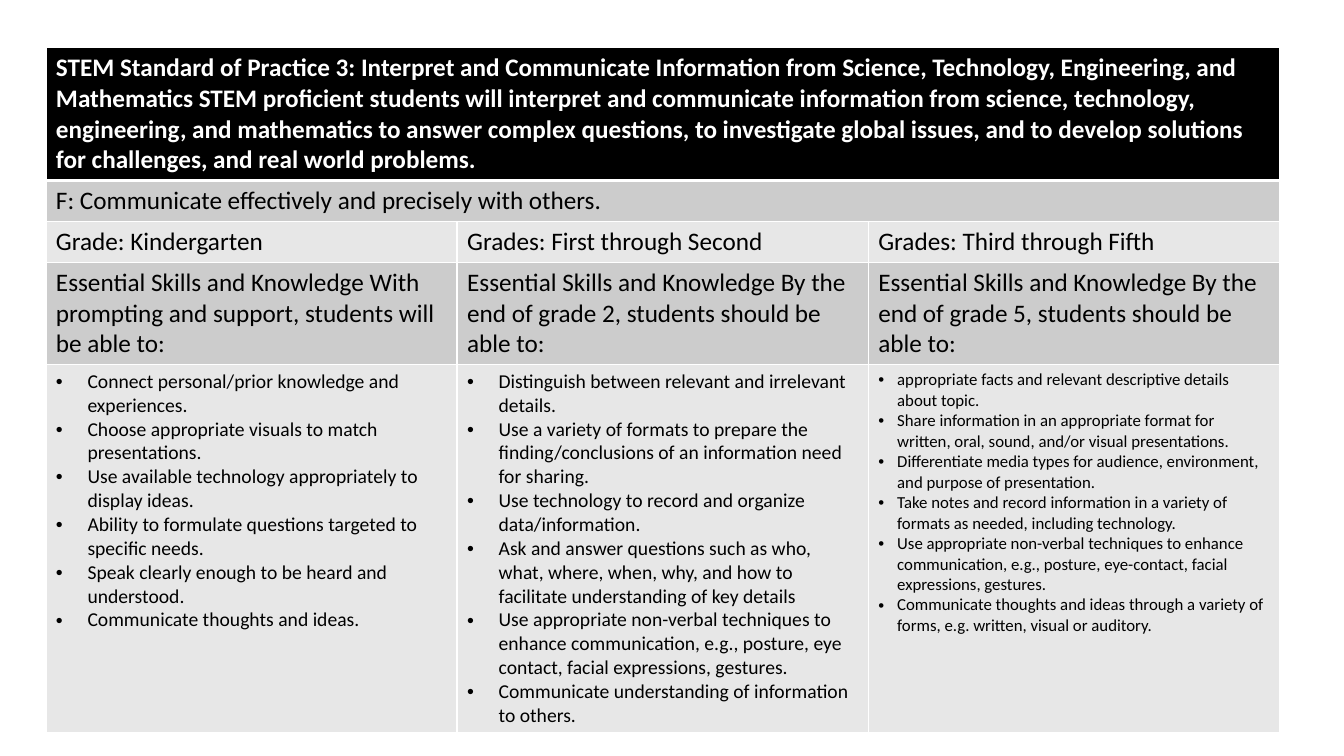
from dataclasses import dataclass

from lxml import etree
from pptx import Presentation
from pptx.dml.color import RGBColor
from pptx.oxml.ns import qn
from pptx.util import Pt

WHITE = RGBColor(0xFF, 0xFF, 0xFF)
BLACK = RGBColor(0, 0, 0)
MID_GREY = RGBColor(0xCC, 0xCC, 0xCC)
LIGHT_GREY = RGBColor(0xE7, 0xE7, 0xE7)
FONT = "Calibri"

LEFT, TOP = 32.8, 33.9
COLUMN_WIDTH = 293.7
ROW_HEIGHTS = [93.6, 29.2, 29.2, 72, 259.1]
ROW_FILLS = [BLACK, MID_GREY, LIGHT_GREY, MID_GREY, LIGHT_GREY]
THIN, THICK = 1, 3

STANDARD = (
    "STEM Standard of Practice 3: Interpret and Communicate Information from Science, "
    "Technology, Engineering, and Mathematics STEM proficient students will interpret and "
    "communicate information from science, technology, engineering, and mathematics to answer "
    "complex questions, to investigate global issues, and to develop solutions for challenges, "
    "and real world problems."
)
PRACTICE = "F: Communicate effectively and precisely with others."


@dataclass(frozen=True)
class GradeBand:
    grades: str
    lead_in: str
    skills: list[str]
    size: float
    indent: float


GRADE_BANDS = [
    GradeBand(
        "Grade: Kindergarten",
        "Essential Skills and Knowledge With prompting and support, students will be able to:",
        [
            "Connect personal/prior knowledge and experiences.",
            "Choose appropriate visuals to match presentations.",
            "Use available technology appropriately to display ideas.",
            "Ability to formulate questions targeted to specific needs.",
            "Speak clearly enough to be heard and understood.",
            "Communicate thoughts and ideas.",
        ],
        size=14, indent=22.5,
    ),
    GradeBand(
        "Grades: First through Second",
        "Essential Skills and Knowledge By the end of grade 2, students should be able to:",
        [
            "Distinguish between relevant and irrelevant details.",
            "Use a variety of formats to prepare the finding/conclusions of an information need "
            "for sharing.",
            "Use technology to record and organize data/information.",
            "Ask and answer questions such as who, what, where, when, why, and how to facilitate "
            "understanding of key details",
            "Use appropriate non-verbal techniques to enhance communication, e.g., posture, eye "
            "contact, facial expressions, gestures.",
            "Communicate understanding of information to others.",
        ],
        size=14, indent=22.5,
    ),
    GradeBand(
        "Grades: Third through Fifth",
        "Essential Skills and Knowledge By the end of grade 5, students should be able to:",
        [
            "appropriate facts and relevant descriptive details about topic.",
            "Share information in an appropriate format for written, oral, sound, and/or visual "
            "presentations.",
            "Differentiate media types for audience, environment, and purpose of presentation.",
            "Take notes and record information in a variety of formats as needed, including "
            "technology.",
            "Use appropriate non-verbal techniques to enhance communication, e.g., posture, "
            "eye-contact, facial expressions, gestures.",
            "Communicate thoughts and ideas through a variety of forms, e.g. written, visual or "
            "auditory.",
        ],
        size=12, indent=13.5,
    ),
]


def write(cell, *lines: str, size: float = 18, color: RGBColor = BLACK,
          bold: bool = False, bullet_indent: float = 0) -> None:
    """Fill a cell with one paragraph per line, bulleted if an indent is given."""
    frame = cell.text_frame
    for number, line in enumerate(lines):
        paragraph = frame.add_paragraph() if number else frame.paragraphs[0]
        run = paragraph.add_run()
        run.text = line
        run.font.name = FONT
        run.font.size = Pt(size)
        run.font.bold = bold
        run.font.color.rgb = color
        if bullet_indent:
            properties = paragraph._p.get_or_add_pPr()
            properties.set("marL", str(Pt(bullet_indent)))
            properties.set("indent", str(-Pt(bullet_indent)))
            etree.SubElement(properties, qn("a:buFont"), typeface="Arial")
            etree.SubElement(properties, qn("a:buChar"), char="•")


def set_borders(cell, top: float = THIN, bottom: float = THIN) -> None:
    """Draw white borders, which must precede the fill in the cell properties."""
    properties = cell._tc.get_or_add_tcPr()
    widths = {"a:lnL": THIN, "a:lnR": THIN, "a:lnT": top, "a:lnB": bottom}
    for position, (side, width) in enumerate(widths.items()):
        line = etree.Element(qn(side), w=str(Pt(width)))
        fill = etree.SubElement(line, qn("a:solidFill"))
        etree.SubElement(fill, qn("a:srgbClr"), val=str(WHITE))
        properties.insert(position, line)


def add_standards_table(slide) -> None:
    table = slide.shapes.add_table(
        len(ROW_HEIGHTS), len(GRADE_BANDS), Pt(LEFT), Pt(TOP),
        Pt(COLUMN_WIDTH * len(GRADE_BANDS)), Pt(sum(ROW_HEIGHTS)),
    ).table
    for column in table.columns:
        column.width = Pt(COLUMN_WIDTH)

    # Row heights, fills and borders
    for index, (height, fill) in enumerate(zip(ROW_HEIGHTS, ROW_FILLS)):
        table.rows[index].height = Pt(height)
        for cell in table.rows[index].cells:
            cell.fill.solid()
            cell.fill.fore_color.rgb = fill
            set_borders(cell, top=THICK if index == 1 else THIN,
                        bottom=THICK if index == 0 else THIN)

    # Full-width standard and practice
    for index in (0, 1):
        table.cell(index, 0).merge(table.cell(index, len(GRADE_BANDS) - 1))
    write(table.cell(0, 0), STANDARD, color=WHITE, bold=True)
    write(table.cell(1, 0), PRACTICE)

    # One column per grade band
    for column, band in enumerate(GRADE_BANDS):
        write(table.cell(2, column), band.grades)
        write(table.cell(3, column), band.lead_in)
        write(table.cell(4, column), *band.skills, size=band.size, bullet_indent=band.indent)


def main() -> None:
    presentation = Presentation()
    presentation.slide_width = Pt(960)
    presentation.slide_height = Pt(540)
    blank_layout = presentation.slide_layouts[6]
    add_standards_table(presentation.slides.add_slide(blank_layout))
    presentation.save("out.pptx")


if __name__ == "__main__":
    main()
